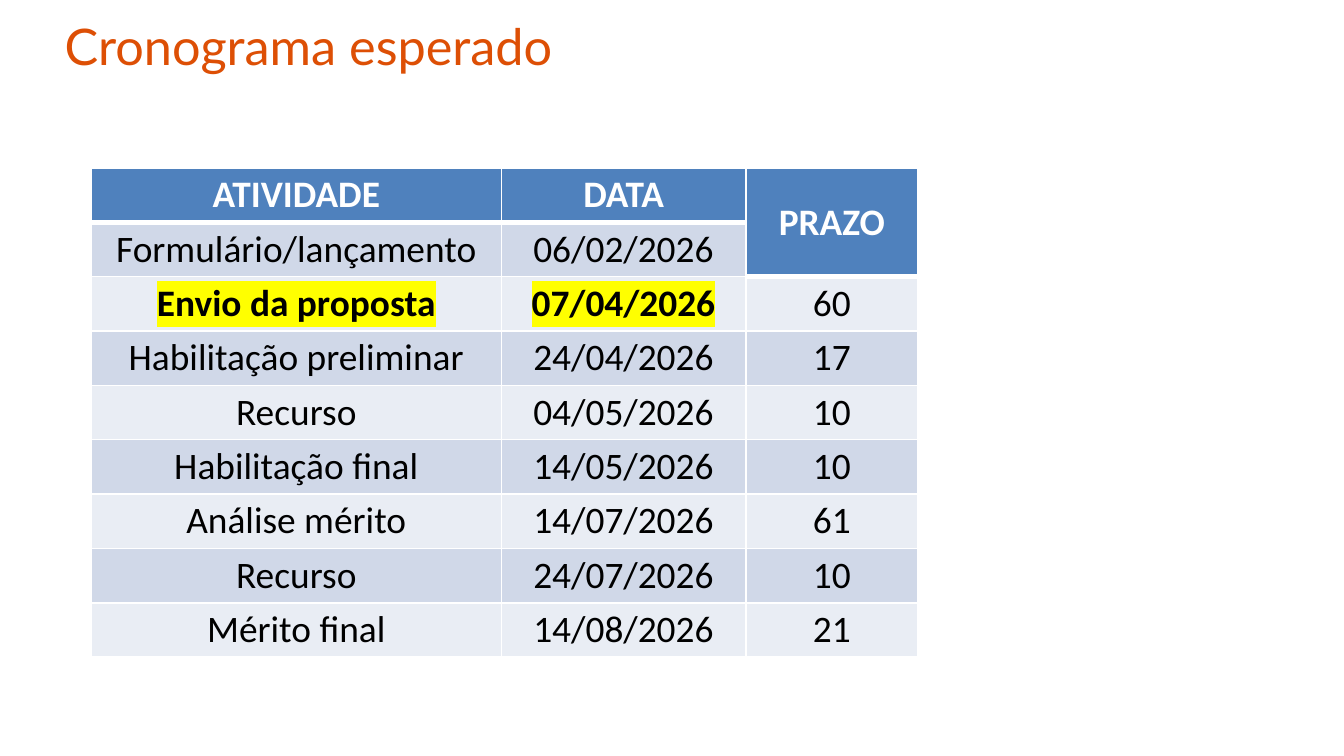
from lxml import etree
from pptx import Presentation
from pptx.dml.color import RGBColor
from pptx.enum.text import MSO_ANCHOR, MSO_AUTO_SIZE, PP_ALIGN
from pptx.oxml.ns import qn
from pptx.util import Inches, Pt

CENTER = PP_ALIGN.CENTER
LEFT = PP_ALIGN.LEFT
MIDDLE = MSO_ANCHOR.MIDDLE
TOP = MSO_ANCHOR.TOP
NO_AUTOFIT = MSO_AUTO_SIZE.NONE

TITLE_LAYOUT = 5
ORANGE, BLUE, WHITE, BLACK, YELLOW = "DD4F05", "4F81BD", "FFFFFF", "000000", "FFFF00"
BANDS = ("E9EDF4", "D0D8E8")
THIN, THICK = 1, 3

COLUMN_WIDTHS = (3.05, 1.82, 1.28)
TABLE_HEIGHT = 3.64
DEADLINE_COL = 2
HIGHLIGHTED = ("Envio da proposta", "07/04/2026")
SCHEDULE = (
    ("ATIVIDADE", "DATA", "PRAZO"),
    ("Formulário/lançamento", "06/02/2026", ""),
    ("Envio da proposta", "07/04/2026", "60"),
    ("Habilitação preliminar", "24/04/2026", "17"),
    ("Recurso", "04/05/2026", "10"),
    ("Habilitação final", "14/05/2026", "10"),
    ("Análise mérito", "14/07/2026", "61"),
    ("Recurso", "24/07/2026", "10"),
    ("Mérito final", "14/08/2026", "21"),
)


def rgb(color):
    return RGBColor.from_string(color)


def add_run(p, text, font, size, color, bold=False, highlight=None):
    r = p.add_run()
    r.text = text
    r.font.size = Pt(size)
    r.font.bold = bold
    r.font.color.rgb = rgb(color)
    if highlight:
        mark = etree.SubElement(r.font._element, qn("a:highlight"))
        etree.SubElement(mark, qn("a:srgbClr"), val=highlight)
    r.font.name = font


def add_title(s, text):
    sp = s.shapes.title
    sp.left, sp.top, sp.width, sp.height = map(Inches, (0.38, 0.11, 8.8, 0.53))
    tf = sp.text_frame
    tf.auto_size = NO_AUTOFIT
    tf.word_wrap = True
    tf.vertical_anchor = TOP
    p = tf.paragraphs[0]
    p.alignment = LEFT
    p.line_spacing = 0.9
    add_run(p, text, "Lato", 27, ORANGE)


def set_borders(cell, top, bottom):
    tc_pr = cell._tc.get_or_add_tcPr()
    sides = (("lnL", THIN), ("lnR", THIN), ("lnT", top), ("lnB", bottom))
    for side, width in sides:
        line = etree.SubElement(tc_pr, qn(f"a:{side}"), w=str(Pt(width)))
        fill = etree.SubElement(line, qn("a:solidFill"))
        etree.SubElement(fill, qn("a:srgbClr"), val=WHITE)


def format_cell(cell, row, col, text):
    """Style a cell; the deadline column has a header two rows high."""
    last_header = 1 if col == DEADLINE_COL else 0
    is_header = row <= last_header
    set_borders(cell,
                THICK if row == last_header + 1 else THIN,
                THICK if row == last_header else THIN)
    cell.fill.solid()
    cell.fill.fore_color.rgb = rgb(BLUE if is_header else BANDS[row % 2])
    cell.vertical_anchor = MIDDLE
    cell.margin_left = cell.margin_right = cell.margin_top = cell.margin_bottom = 0
    if text:
        p = cell.text_frame.paragraphs[0]
        p.alignment = CENTER
        marked = text in HIGHLIGHTED
        add_run(p, text, "Calibri", 20, WHITE if is_header else BLACK,
                is_header or marked, YELLOW if marked else None)


def add_schedule(s):
    row_count = len(SCHEDULE)
    table = s.shapes.add_table(
        row_count, len(COLUMN_WIDTHS), Inches(0.68), Inches(1.25),
        Inches(sum(COLUMN_WIDTHS)), Inches(TABLE_HEIGHT)).table
    for column, width in zip(table.columns, COLUMN_WIDTHS):
        column.width = Inches(width)
    for row in table.rows:
        row.height = Inches(TABLE_HEIGHT / row_count)
    table.cell(0, DEADLINE_COL).merge(table.cell(1, DEADLINE_COL))
    for row, texts in enumerate(SCHEDULE):
        for col, text in enumerate(texts):
            format_cell(table.cell(row, col), row, col, text)


def main():
    prs = Presentation()
    prs.slide_width = Inches(10)
    prs.slide_height = prs.slide_width * 9 // 16
    s = prs.slides.add_slide(prs.slide_layouts[TITLE_LAYOUT])
    add_title(s, "Cronograma esperado")
    add_schedule(s)
    prs.save("out.pptx")


if __name__ == "__main__":
    main()
